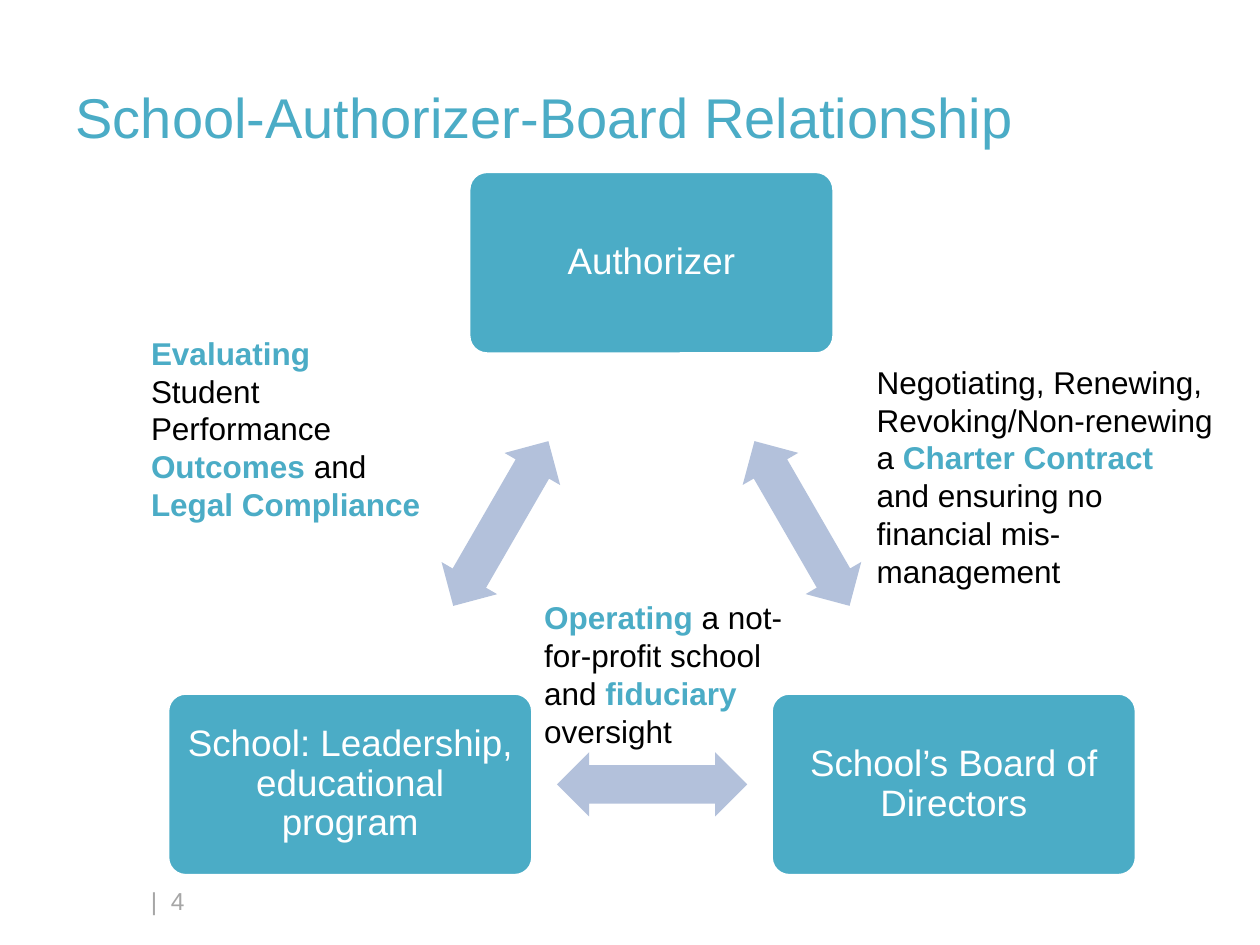
from dataclasses import dataclass

from pptx import Presentation
from pptx import util as u
from pptx.dml.color import RGBColor
from pptx.enum import shapes, text

EMU_PER_PX = 9144  # 100 px to the inch


@dataclass(frozen=True)
class Theme:
    font: str = "Arial"
    accent: RGBColor = RGBColor(0x4B, 0xAC, 0xC6)
    arrow: RGBColor = RGBColor(0xB3, 0xC1, 0xDB)
    white: RGBColor = RGBColor(0xFF, 0xFF, 0xFF)
    black: RGBColor = RGBColor(0, 0, 0)
    grey: RGBColor = RGBColor(0xA6, 0xA6, 0xA6)
    title_size: int = 32
    party_size: int = 21
    note_size: int = 18
    footer_size: int = 14


THEME = Theme()


@dataclass(frozen=True)
class Party:
    label: str
    left: int
    top: int


@dataclass(frozen=True)
class Arrow:
    left: int
    top: int
    angle: int


@dataclass(frozen=True)
class Note:
    """Spans alternate between plain and emphasised wording."""
    left: int
    top: int
    width: int
    height: int
    spans: tuple[str, ...]
    starts_bold: bool


PARTY_WIDTH, PARTY_HEIGHT = 290, 145
ARROW_WIDTH, ARROW_HEIGHT = 151, 51

PARTIES = (
    Party("Authorizer", 372, 136),
    Party("School’s Board of Directors", 612, 550),
    Party("School: Leadership, educational program", 133, 550),
)
ARROWS = (Arrow(561, 390, 60), Arrow(442, 597, 180), Arrow(322, 390, 300))
NOTES = (
    Note(686, 283, 287, 192,
         ("Negotiating, Renewing, Revoking/Non-renewing a ", "Charter Contract ",
          "and ensuring no financial mis-management"), False),
    Note(422, 470, 239, 131,
         ("Operating", " a not-for-profit school and ", "fiduciary ", "oversight"), True),
    Note(110, 260, 239, 162,
         ("Evaluating", " Student Performance ", "Outcomes ", "and ",
          "Legal Compliance"), True),
)


def px(*lengths: int) -> list[u.Emu]:
    return [u.Emu(length * EMU_PER_PX) for length in lengths]


def style(span, size: int, color: RGBColor, bold: bool = False) -> None:
    span.font.name = THEME.font
    span.font.size = u.Pt(size)
    span.font.bold = bold
    span.font.color.rgb = color


def draw_title(page, wording: str) -> None:
    title = page.shapes.title
    title.left, title.top, title.width, title.height = px(50, 30, 900, 125)
    frame = title.text_frame
    frame.text = wording
    frame.vertical_anchor = text.MSO_ANCHOR.MIDDLE
    para = frame.paragraphs[0]
    para.alignment = text.PP_ALIGN.LEFT
    style(para.runs[0], THEME.title_size, THEME.accent)


def draw_party(page, party: Party) -> None:
    box = page.shapes.add_shape(
        shapes.MSO_SHAPE.ROUNDED_RECTANGLE,
        *px(party.left, party.top, PARTY_WIDTH, PARTY_HEIGHT))
    box.adjustments[0] = 0.1
    box.shadow.inherit = False
    box.fill.solid()
    box.fill.fore_color.rgb = THEME.accent
    box.line.color.rgb = THEME.white
    box.line.width = u.Pt(2)
    frame = box.text_frame
    frame.word_wrap = True
    frame.vertical_anchor = text.MSO_ANCHOR.MIDDLE
    (frame.margin_left, frame.margin_top,
     frame.margin_right, frame.margin_bottom) = px(9, 9, 9, 9)
    frame.text = party.label
    para = frame.paragraphs[0]
    para.alignment = text.PP_ALIGN.CENTER
    para.line_spacing = 0.9
    style(para.runs[0], THEME.party_size, THEME.white)


def draw_arrow(page, arrow: Arrow) -> None:
    shape = page.shapes.add_shape(
        shapes.MSO_SHAPE.LEFT_RIGHT_ARROW,
        *px(arrow.left, arrow.top, ARROW_WIDTH, ARROW_HEIGHT))
    shape.adjustments[0] = 0.6
    shape.adjustments[1] = 0.5
    shape.rotation = arrow.angle
    shape.shadow.inherit = False
    shape.fill.solid()
    shape.fill.fore_color.rgb = THEME.arrow
    shape.line.fill.background()


def draw_note(page, note: Note) -> None:
    box = page.shapes.add_textbox(*px(note.left, note.top, note.width, note.height))
    frame = box.text_frame
    frame.word_wrap = True
    frame.auto_size = text.MSO_AUTO_SIZE.SHAPE_TO_FIT_TEXT
    para = frame.paragraphs[0]
    bold = note.starts_bold
    for wording in note.spans:
        span = para.add_run()
        span.text = wording
        style(span, THEME.note_size, THEME.accent if bold else THEME.black, bold)
        bold = not bold


def draw_page_number(page, wording: str) -> None:
    box = page.shapes.add_textbox(*px(110, 695, 233, 40))
    frame = box.text_frame
    frame.word_wrap = True
    frame.vertical_anchor = text.MSO_ANCHOR.MIDDLE
    frame.text = wording
    style(frame.paragraphs[0].runs[0], THEME.footer_size, THEME.grey)


def main() -> None:
    deck = Presentation()
    deck.slide_width, deck.slide_height = px(1000, 750)
    page = deck.slides.add_slide(deck.slide_layouts.get_by_name("Title Only"))

    # Title and page number
    draw_title(page, "School-Authorizer-Board Relationship")
    draw_page_number(page, "|  4")

    # Triangle of parties joined by arrows
    for party in PARTIES:
        draw_party(page, party)
    for arrow in ARROWS:
        draw_arrow(page, arrow)

    # Notes beside each arrow
    for note in NOTES:
        draw_note(page, note)

    deck.save("out.pptx")


if __name__ == "__main__":
    main()
